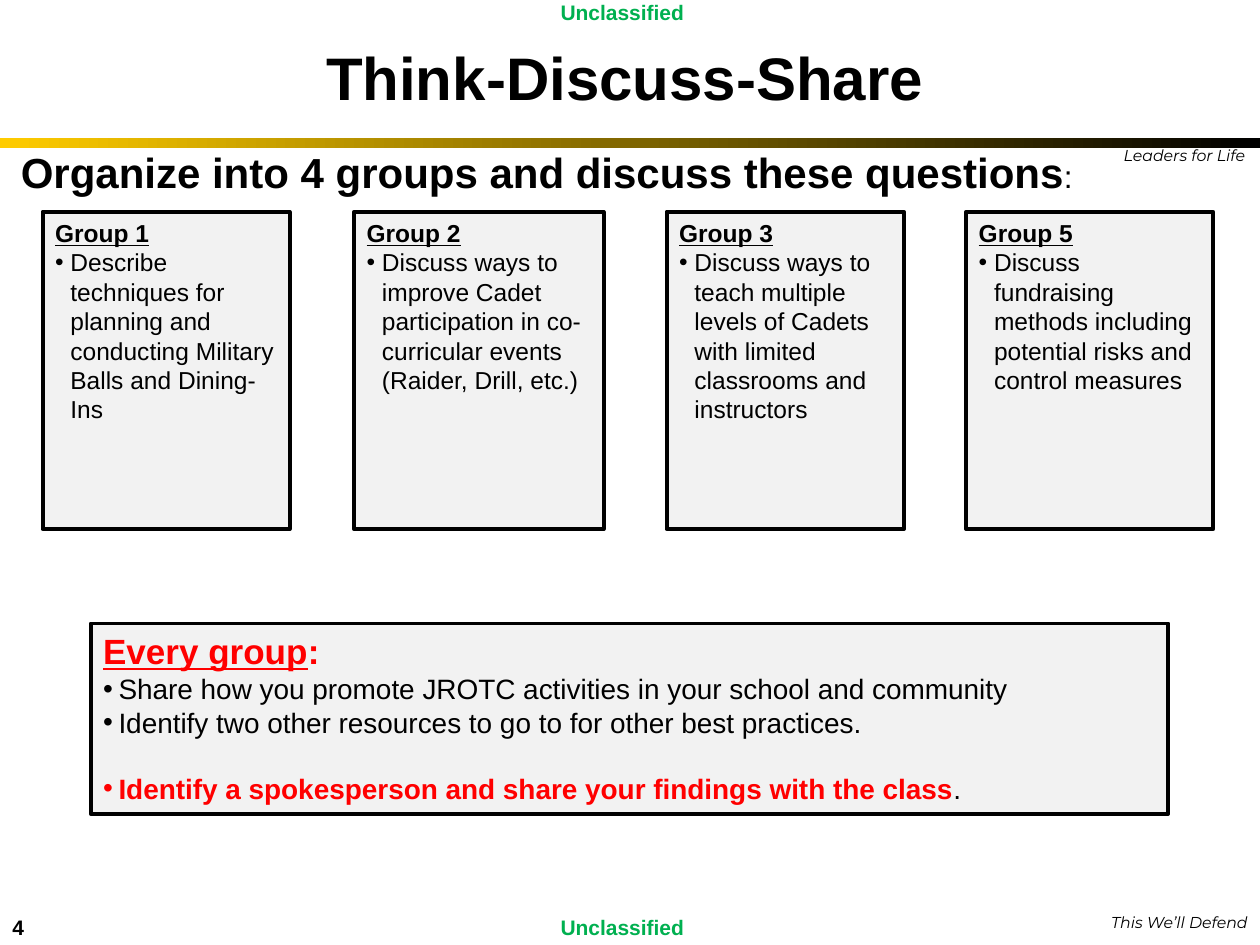
from dataclasses import dataclass

from lxml import etree
from pptx import Presentation
from pptx.dml.color import RGBColor
from pptx.enum.shapes import MSO_SHAPE
from pptx.enum.text import MSO_ANCHOR, MSO_AUTO_SIZE, PP_ALIGN
from pptx.oxml.ns import qn
from pptx.util import Cm, Pt

RECTANGLE = MSO_SHAPE.RECTANGLE
LEFT, CENTER, RIGHT = PP_ALIGN.LEFT, PP_ALIGN.CENTER, PP_ALIGN.RIGHT
TOP, MIDDLE, BOTTOM = MSO_ANCHOR.TOP, MSO_ANCHOR.MIDDLE, MSO_ANCHOR.BOTTOM
NO_AUTOFIT = MSO_AUTO_SIZE.NONE

BLACK, RED, GREEN, GOLD, PANEL = "000000", "FF0000", "00B050", "FFCC00", "F2F2F2"
TITLE_ONLY = 5
BULLET_INDENT = Cm(0.31)


@dataclass
class Style:
    size: float
    color: str = BLACK
    bold: bool = False
    underline: bool = False
    italic: bool = False
    face: str = "Arial"


@dataclass
class Line:
    """One paragraph, as pairs of text and style."""
    runs: list[tuple[str, Style]]
    bullet: bool = False
    space_before: float = 0
    align: PP_ALIGN = LEFT


@dataclass
class Box:
    """Position and size in centimetres."""
    left: float
    top: float
    width: float
    height: float

    def lengths(self) -> tuple:
        return Cm(self.left), Cm(self.top), Cm(self.width), Cm(self.height)


@dataclass
class Group:
    number: int
    left: float
    width: float
    task: str


MARKING = Style(12, GREEN, bold=True)
MOTTO = Style(9, italic=True, face="Montserrat")
GROUP_NAME = Style(14, bold=True, underline=True)
GROUP_TASK = Style(14)
SHARED_TASK = Style(16)

GROUPS = [
    Group(1, 0.86, 4.98, "Describe techniques for planning and conducting "
                         "Military Balls and Dining-Ins"),
    Group(2, 7.14, 5.03, "Discuss ways to improve Cadet participation in "
                         "co-curricular events (Raider, Drill, etc.)"),
    Group(3, 13.44, 4.78, "Discuss ways to teach multiple levels of Cadets "
                          "with limited classrooms and instructors"),
    Group(5, 19.48, 4.98, "Discuss fundraising methods including potential "
                          "risks and control measures"),
]

EVERY_GROUP = [
    Line([("Every group", Style(20, RED, bold=True, underline=True)),
          (":", Style(20, RED, bold=True))]),
    Line([("Share how you promote JROTC activities in your school and community",
           SHARED_TASK)], bullet=True),
    Line([("Identify two other resources to go to for other best practices.",
           SHARED_TASK)], bullet=True),
    Line([("Identify a spokesperson and share your findings with the class",
           Style(16, RED, bold=True)), (".", SHARED_TASK)],
         bullet=True, space_before=18.4),
]


def rgb(color: str) -> RGBColor:
    return RGBColor.from_string(color)


def apply_style(font, style: Style) -> None:
    font.name = style.face
    font.size = Pt(style.size)
    font.bold = style.bold
    font.italic = style.italic
    font.underline = style.underline
    font.color.rgb = rgb(style.color)


def add_bullet(paragraph) -> None:
    properties = paragraph._p.get_or_add_pPr()
    properties.set("marL", str(BULLET_INDENT))
    properties.set("indent", str(-BULLET_INDENT))
    etree.SubElement(properties, qn("a:buFont")).set("typeface", "Arial")
    etree.SubElement(properties, qn("a:buChar")).set("char", "•")


def write(frame, lines: list[Line], anchor=TOP, wrap: bool = True) -> None:
    frame.word_wrap = wrap
    frame.auto_size = NO_AUTOFIT
    frame.vertical_anchor = anchor
    for index, line in enumerate(lines):
        paragraph = frame.add_paragraph() if index else frame.paragraphs[0]
        paragraph.alignment = line.align
        if line.space_before:
            paragraph.space_before = Pt(line.space_before)
        if line.bullet:
            add_bullet(paragraph)
        for text, style in line.runs:
            run = paragraph.add_run()
            run.text = text
            if len(line.runs) > 1:
                apply_style(run.font, style)
        if len(line.runs) == 1:
            apply_style(paragraph.font, line.runs[0][1])


def add_label(slide, box: Box, line: Line, anchor=TOP) -> None:
    label = slide.shapes.add_textbox(*box.lengths())
    write(label.text_frame, [line], anchor, wrap=False)


def add_panel(slide, box: Box, lines: list[Line]) -> None:
    panel = slide.shapes.add_shape(RECTANGLE, *box.lengths())
    panel.shadow.inherit = False
    panel.fill.solid()
    panel.fill.fore_color.rgb = rgb(PANEL)
    panel.line.color.rgb = rgb(BLACK)
    panel.line.width = Pt(2.25)
    write(panel.text_frame, lines)


def add_gold_band(slide, box: Box) -> None:
    band = slide.shapes.add_shape(RECTANGLE, *box.lengths())
    band.shadow.inherit = False
    band.line.fill.background()
    band.fill.gradient()
    band.fill.gradient_angle = 0
    for stop, color in zip(band.fill.gradient_stops, (GOLD, BLACK)):
        stop.color.rgb = rgb(color)


def add_title(slide, box: Box, text: str) -> None:
    title = slide.shapes.title
    title.left, title.top, title.width, title.height = box.lengths()
    write(title.text_frame,
          [Line([(text, Style(34.3, bold=True))], align=CENTER)], MIDDLE)


def main() -> None:
    deck = Presentation()
    deck.slide_width, deck.slide_height = Cm(25.4), Cm(19.05)
    slide = deck.slides.add_slide(deck.slide_layouts[TITLE_ONLY])

    add_gold_band(slide, Box(0, 2.78, 25.4, 0.2))
    add_label(slide, Box(22.07, 2.82, 3.28, 0.64),
              Line([("Leaders for Life", MOTTO)], align=RIGHT))
    add_label(slide, Box(21.87, 18.28, 3.53, 0.64),
              Line([("This We’ll Defend", MOTTO)], align=RIGHT))
    add_label(slide, Box(0, 18.24, 2.34, 0.83),
              Line([("4", Style(12, bold=True))]), BOTTOM)
    for marking_top in (-0.13, 18.32):
        add_label(slide, Box(11.05, marking_top, 3.02, 0.76),
                  Line([("Unclassified", MARKING)]))

    add_title(slide, Box(1.9, 0.67, 21.39, 1.73), "Think-Discuss-Share")
    add_label(slide, Box(0.17, 2.82, 21.9, 1.27), Line([
        ("Organize into 4 groups and discuss these questions",
         Style(24, bold=True)), (":", Style(18))]))

    for group in GROUPS:
        add_panel(slide, Box(group.left, 4.27, group.width, 6.4), [
            Line([(f"Group {group.number}", GROUP_NAME)]),
            Line([(group.task, GROUP_TASK)], bullet=True)])
    add_panel(slide, Box(1.83, 12.57, 21.72, 3.84), EVERY_GROUP)

    deck.save("out.pptx")


if __name__ == "__main__":
    main()
